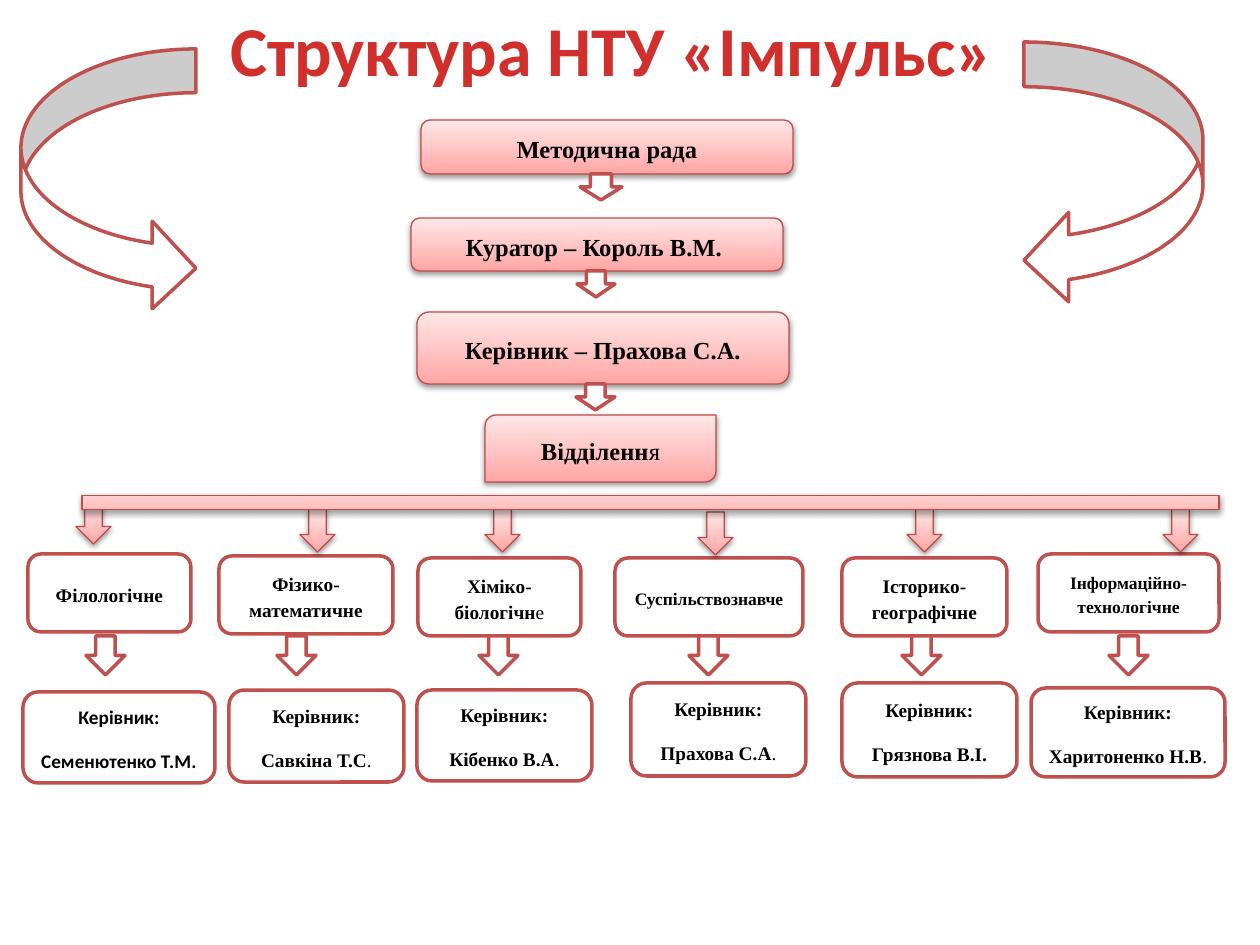
from lxml import etree
from pptx import Presentation
from pptx import util as u
from pptx.dml.color import RGBColor
from pptx.enum import shapes, text
from pptx.oxml.ns import qn

PX = 914400 / 126
RED = RGBColor(0xD0, 0x2F, 0x2C)
EDGE = RGBColor(0xC0, 0x50, 0x4D)
RIM = RGBColor(0xBF, 0x4C, 0x48)
DEEP = RGBColor(0xFF, 0xA6, 0xA5)
PALE = RGBColor(0xFF, 0xE7, 0xE7)
WHITE = RGBColor(0xFF, 0xFF, 0xFF)
BLACK = RGBColor(0, 0, 0)
KIND = shapes.MSO_SHAPE
SERIF = "Times New Roman"

deck = Presentation()
deck.slide_width, deck.slide_height = u.Inches(10), u.Inches(7.5)
slide = deck.slides.add_slide(deck.slide_layouts[5])


def draw(kind, x, y, w, h, soft=False):
    shape = slide.shapes.add_shape(kind, *[round(n * PX) for n in (x, y, w, h)])
    shape.shadow.inherit = False
    if soft:
        shape.fill.gradient()
        shape.fill.gradient_angle = 90
        for stop, tone in zip(shape.fill.gradient_stops, (DEEP, PALE)):
            stop.color.rgb = tone
        glow = etree.SubElement(
            shape._element.spPr.find(qn("a:effectLst")), qn("a:outerShdw"),
            blurRad="40000", dist="20000", dir="5400000", rotWithShape="0")
        tint = etree.SubElement(glow, qn("a:srgbClr"), val="000000")
        etree.SubElement(tint, qn("a:alpha"), val="38000")
    else:
        shape.fill.solid()
        shape.fill.fore_color.rgb = WHITE
    shape.line.color.rgb = RIM if soft else EDGE
    shape.line.width = u.Pt(0.75 if soft else 2)
    return shape


def write(shape, words, size=11, font=SERIF, color=BLACK, tail="",
          lead=1.15, after=10, wrap=True, anchor=text.MSO_ANCHOR.MIDDLE):
    frame = shape.text_frame
    frame.word_wrap = wrap
    frame.vertical_anchor = anchor
    lines = words.split("\n")
    for i, line in enumerate(lines):
        para = frame.add_paragraph() if i else frame.paragraphs[0]
        para.alignment = text.PP_ALIGN.CENTER
        para.line_spacing = lead
        para.space_after = u.Pt(after)
        parts = [(line, True)]
        if tail and i == len(lines) - 1:
            parts.append((tail, False))
        for part, bold in parts:
            run = para.add_run()
            run.text = part
            run.font.size = u.Pt(size)
            run.font.name = font
            run.font.bold = bold
            run.font.color.rgb = color


title = slide.shapes.title
title.left, title.top = round(214 * PX), 0
title.width, title.height = round(796 * PX), round(97 * PX)
title.text_frame.auto_size = text.MSO_AUTO_SIZE.NONE
write(title, "Структура НТУ «Імпульс»", size=40, font="Calibri", color=RED,
      lead=1.0, after=0, wrap=False, anchor=text.MSO_ANCHOR.TOP)

for x, y, h, words in [
    (421, 120, 54, "Методична рада"),
    (411, 218, 53, "Куратор – Король В.М. "),
    (417, 312, 72, "Керівник – Прахова С.А."),
]:
    write(draw(KIND.ROUNDED_RECTANGLE, x, y, 372, h, soft=True), words, size=14)

unit = draw(KIND.ROUND_2_DIAG_RECTANGLE, 485, 415, 231, 67, soft=True)
write(unit, "Відділенн", size=14, tail="я")

for x, y, w in [(580, 174, 42), (577, 271, 38), (576, 384, 39)]:
    draw(KIND.DOWN_ARROW, x, y, w, 26)

for x, y, w, size, words, tail in [
    (28, 554, 163, 11, "Філологічне", ""),
    (219, 556, 174, 11, "Фізико-математичне", ""),
    (418, 558, 163, 11, "Хіміко-біологічн", "е"),
    (615, 558, 188, 10, "Суспільствознавче", ""),
    (842, 558, 165, 11, "Історико-географічне", ""),
    (1038, 554, 181, 10, "Інформаційно-технологічне", ""),
]:
    branch = draw(KIND.ROUNDED_RECTANGLE, x, y, w, 78)
    write(branch, words, size=size, tail=tail)

for x, y, w, h, name, tail, font in [
    (23, 692, 192, 91, "Семенютенко Т.М.", "", "Calibri"),
    (229, 690, 175, 92, "Савкіна Т.С", ".", SERIF),
    (417, 690, 175, 91, "Кібенко В.А", ".", SERIF),
    (631, 683, 175, 93, "Прахова С.А", ".", SERIF),
    (842, 683, 175, 94, "Грязнова В.І.", "", SERIF),
    (1031, 688, 194, 89, "Харитоненко Н.В", ".", SERIF),
]:
    head = draw(KIND.ROUNDED_RECTANGLE, x, y, w, h)
    write(head, "Керівник:\n" + name, tail=tail, font=font)

for x in (86, 277, 479, 689, 902, 1109):
    draw(KIND.DOWN_ARROW, x, 636, 39, 39)

for x, y in [(76, 501), (300, 509), (485, 509), (698, 512), (907, 509), (1163, 509)]:
    draw(KIND.DOWN_ARROW, x, y, 35, 43, soft=True)

bar = draw(KIND.MATH_MINUS, -123, 481, 1547, 43, soft=True)
bar.adjustments[0] = 0.33

draw(KIND.CURVED_LEFT_ARROW, 1024, 42, 179, 263)
draw(KIND.CURVED_RIGHT_ARROW, 21, 49, 175, 263)

deck.save("out.pptx")
